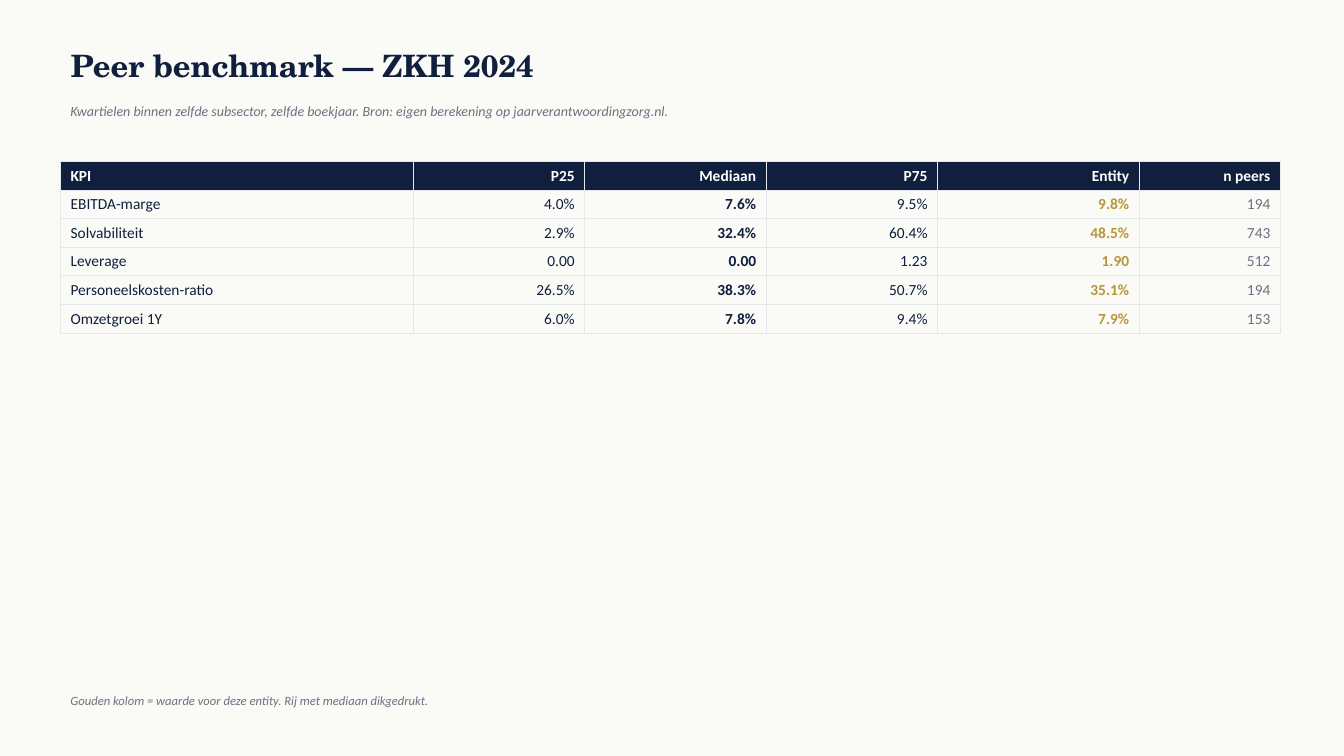
from lxml import etree
from pptx import Presentation
from pptx.dml.color import RGBColor
from pptx.enum.text import MSO_ANCHOR, PP_ALIGN
from pptx.oxml.ns import qn
from pptx.util import Inches, Pt

LEFT, RIGHT = PP_ALIGN.LEFT, PP_ALIGN.RIGHT
MIDDLE = MSO_ANCHOR.MIDDLE

NAVY = RGBColor(0x0F, 0x1F, 0x3D)
GOLD = RGBColor(0xB8, 0x97, 0x3B)
GRAY = RGBColor(0x6B, 0x72, 0x80)
WHITE = RGBColor(0xFF, 0xFF, 0xFF)
PAPER = RGBColor(0xFA, 0xFA, 0xF7)
GRID = RGBColor(0xE5, 0xE7, 0xEB)

# Content
TITLE = "Peer benchmark — ZKH 2024"
SUBTITLE = ("Kwartielen binnen zelfde subsector, zelfde boekjaar. "
            "Bron: eigen berekening op jaarverantwoordingzorg.nl.")
FOOTNOTE = "Gouden kolom = waarde voor deze entity. Rij met mediaan dikgedrukt."
COLUMNS = [  # heading, width, body colour, body bold
    ("KPI", 3.5, NAVY, False),
    ("P25", 1.7, NAVY, False),
    ("Mediaan", 1.8, NAVY, True),
    ("P75", 1.7, NAVY, False),
    ("Entity", 2.0, GOLD, True),
    ("n peers", 1.4, GRAY, False),
]
ROWS = [
    ("EBITDA-marge", "4.0%", "7.6%", "9.5%", "9.8%", "194"),
    ("Solvabiliteit", "2.9%", "32.4%", "60.4%", "48.5%", "743"),
    ("Leverage", "0.00", "0.00", "1.23", "1.90", "512"),
    ("Personeelskosten-ratio", "26.5%", "38.3%", "50.7%", "35.1%", "194"),
    ("Omzetgroei 1Y", "6.0%", "7.8%", "9.4%", "7.9%", "153"),
]
MARGIN, TEXT_W, ROW_H = 0.6, 12, 0.28


def write(tf, text, size, color, font="Calibri", bold=False, italic=False, align=LEFT):
    tf.text = text
    p = tf.paragraphs[0]
    p.alignment = align
    f = p.runs[0].font
    f.name, f.size, f.bold, f.italic = font, Pt(size), bold, italic
    f.color.rgb = color


def add_note(s, text, top, size):
    sp = s.shapes.add_textbox(Inches(MARGIN), Inches(top), Inches(TEXT_W), Inches(0.3))
    tf = sp.text_frame
    tf.word_wrap = True
    tf.vertical_anchor = MIDDLE
    write(tf, text, size, GRAY, italic=True)


def add_borders(cell):
    tcPr = cell._tc.get_or_add_tcPr()
    for side in ("a:lnL", "a:lnR", "a:lnT", "a:lnB"):
        ln = etree.SubElement(tcPr, qn(side), w=str(Pt(0.5)))
        fill = etree.SubElement(ln, qn("a:solidFill"))
        etree.SubElement(fill, qn("a:srgbClr"), val=str(GRID))


def add_benchmark(s):
    width = sum(col[1] for col in COLUMNS)
    n_rows = len(ROWS) + 1
    table = s.shapes.add_table(n_rows, len(COLUMNS), Inches(MARGIN), Inches(1.6),
                               Inches(width), Inches(ROW_H * n_rows)).table
    table.first_row = table.horz_banding = False
    for j, (heading, col_w, color, bold) in enumerate(COLUMNS):
        table.columns[j].width = Inches(col_w)
        align = RIGHT if j else LEFT
        for i, text in enumerate([heading] + [row[j] for row in ROWS]):
            cell = table.cell(i, j)
            add_borders(cell)
            if i == 0:
                cell.fill.solid()
                cell.fill.fore_color.rgb = NAVY
                write(cell.text_frame, text, 11, WHITE, bold=True, align=align)
            else:
                cell.fill.background()
                write(cell.text_frame, text, 11, color, bold=bold, align=align)


def main():
    prs = Presentation()
    prs.slide_width, prs.slide_height = Inches(13.33), Inches(7.5)
    s = prs.slides.add_slide(prs.slide_layouts[5])
    s.background.fill.solid()
    s.background.fill.fore_color.rgb = PAPER

    # Title and subtitle
    title = s.shapes.title
    title.left, title.top = Inches(MARGIN), Inches(0.4)
    title.width, title.height = Inches(TEXT_W), Inches(0.5)
    title.text_frame.vertical_anchor = MIDDLE
    write(title.text_frame, TITLE, 22, NAVY, font="TeX Gyre Schola", bold=True)
    add_note(s, SUBTITLE, 0.95, 10)

    # Table and footnote
    add_benchmark(s)
    add_note(s, FOOTNOTE, 6.8, 9)

    prs.save("out.pptx")


if __name__ == "__main__":
    main()
